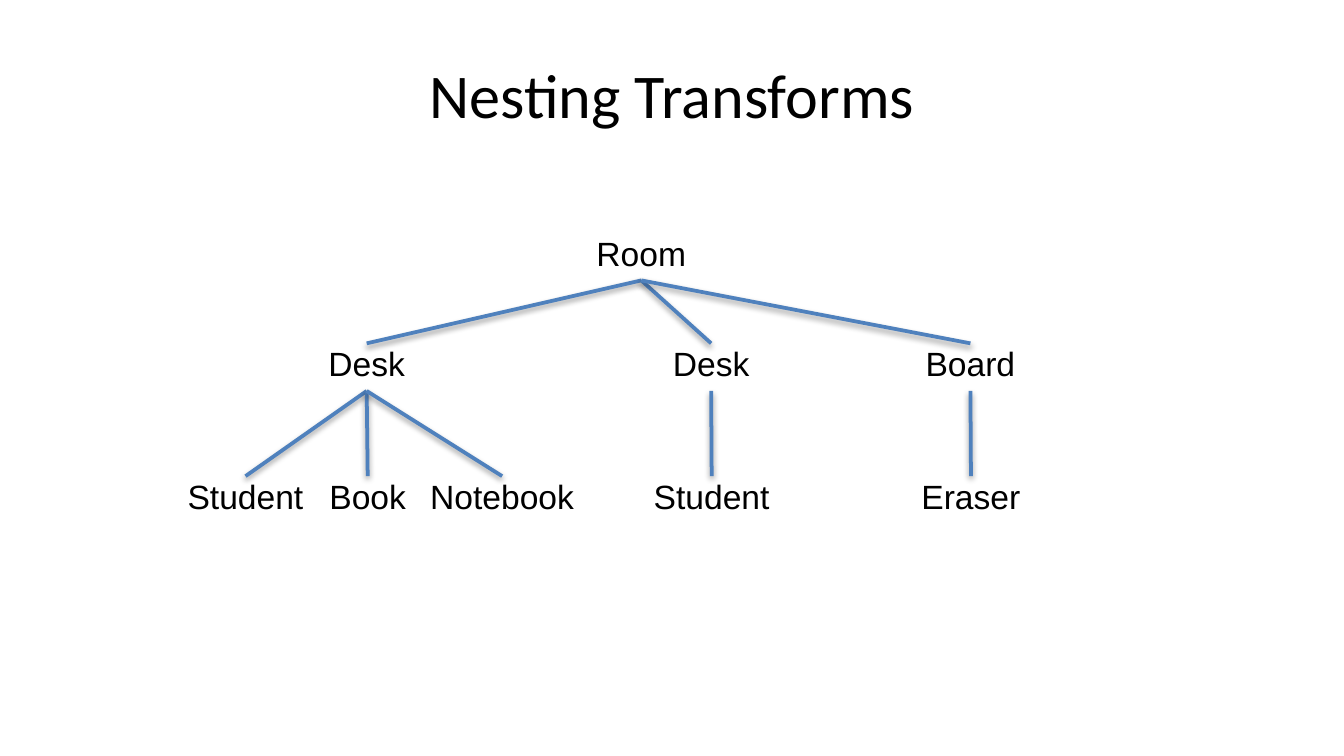
from dataclasses import dataclass

from lxml import etree
from pptx import Presentation
from pptx.dml.color import RGBColor
from pptx.enum.shapes import MSO_CONNECTOR
from pptx.enum.text import MSO_ANCHOR, PP_ALIGN
from pptx.oxml import parse_xml
from pptx.oxml.ns import nsdecls
from pptx.util import Cm, Pt

STRAIGHT = MSO_CONNECTOR.STRAIGHT
MIDDLE = MSO_ANCHOR.MIDDLE
TOP = MSO_ANCHOR.TOP
CENTER = PP_ALIGN.CENTER


@dataclass(frozen=True)
class Theme:
    text: RGBColor = RGBColor(0x00, 0x00, 0x00)
    branch: RGBColor = RGBColor(0x4F, 0x81, 0xBD)
    branch_width: Pt = Pt(2)
    title_font: str = "Calibri"
    title_size: Pt = Pt(33.3)
    node_font: str = "Arial"
    node_size: Pt = Pt(18)


@dataclass(frozen=True)
class Box:
    """A region of the slide, in centimetres."""
    left: float
    top: float
    width: float
    height: float


@dataclass(frozen=True)
class Node:
    """A label with its centre across the tree and its width, in centimetres."""
    label: str
    center: float
    width: float
    children: tuple = ()


THEME = Theme()
NODE_HEIGHT = 0.9
LEVEL_TOPS = (0, 2.09, 4.6)
SHADOW = (
    f'<a:effectLst {nsdecls("a")}>'
    '<a:outerShdw blurRad="40000" dist="20000" dir="5400000" rotWithShape="0">'
    '<a:srgbClr val="000000"><a:alpha val="38000"/></a:srgbClr>'
    '</a:outerShdw></a:effectLst>'
)

ROOM = Node("Room", 8.84, 2.24, (
    Node("Desk", 3.65, 1.98, (
        Node("Student", 1.36, 2.72),
        Node("Book", 3.67, 1.98),
        Node("Notebook", 6.21, 3.25),
    )),
    Node("Desk", 10.16, 1.98, (Node("Student", 10.17, 2.72),)),
    Node("Board", 15.06, 2.24, (Node("Eraser", 15.07, 2.41),)),
))


def add_text(slide, box, text, frame_format, font_format, line_spacing):
    shape = slide.shapes.add_textbox(
        Cm(box.left), Cm(box.top), Cm(box.width), Cm(box.height))
    frame = shape.text_frame
    for name, value in frame_format.items():
        setattr(frame, name, value)
    paragraph = frame.paragraphs[0]
    paragraph.alignment = CENTER
    paragraph.line_spacing = line_spacing
    run = paragraph.add_run()
    run.text = text
    for name, value in font_format.items():
        setattr(run.font, name, value)
    run.font.color.rgb = THEME.text


def add_title(slide, box, text):
    add_text(slide, box, text,
             {"word_wrap": True, "vertical_anchor": MIDDLE},
             {"name": THEME.title_font, "size": THEME.title_size}, 1.0)


def add_branch(slide, start, end):
    """Join two points, given in centimetres, with a softly shadowed line."""
    branch = slide.shapes.add_connector(
        STRAIGHT, *(Cm(value) for value in (*start, *end)))
    branch.line.color.rgb = THEME.branch
    branch.line.width = THEME.branch_width
    properties = branch._element.spPr
    properties.append(parse_xml(etree.tostring(etree.fromstring(SHADOW))))


def add_tree(slide, box, node, level=0):
    """Draw a node, then its branches and children one level further down."""
    center = box.left + node.center
    top = box.top + LEVEL_TOPS[level]
    label_box = Box(center - node.width / 2, top, node.width, NODE_HEIGHT)
    add_text(slide, label_box, node.label,
             {"word_wrap": False, "vertical_anchor": TOP},
             {"name": THEME.node_font, "size": THEME.node_size}, 0.83)
    for child in node.children:
        child_top = box.top + LEVEL_TOPS[level + 1]
        add_branch(slide, (center, top + NODE_HEIGHT),
                   (box.left + child.center, child_top))
        add_tree(slide, box, child, level + 1)


def main():
    presentation = Presentation()
    presentation.slide_width = Cm(25.4)
    presentation.slide_height = Cm(14.29)
    slide = presentation.slides.add_slide(presentation.slide_layouts[6])
    add_title(slide, Box(1.27, 0.59, 22.86, 2.38), "Nesting Transforms")
    add_tree(slide, Box(3.28, 4.4, 16.28, 5.5), ROOM)
    presentation.save("out.pptx")


if __name__ == "__main__":
    main()
